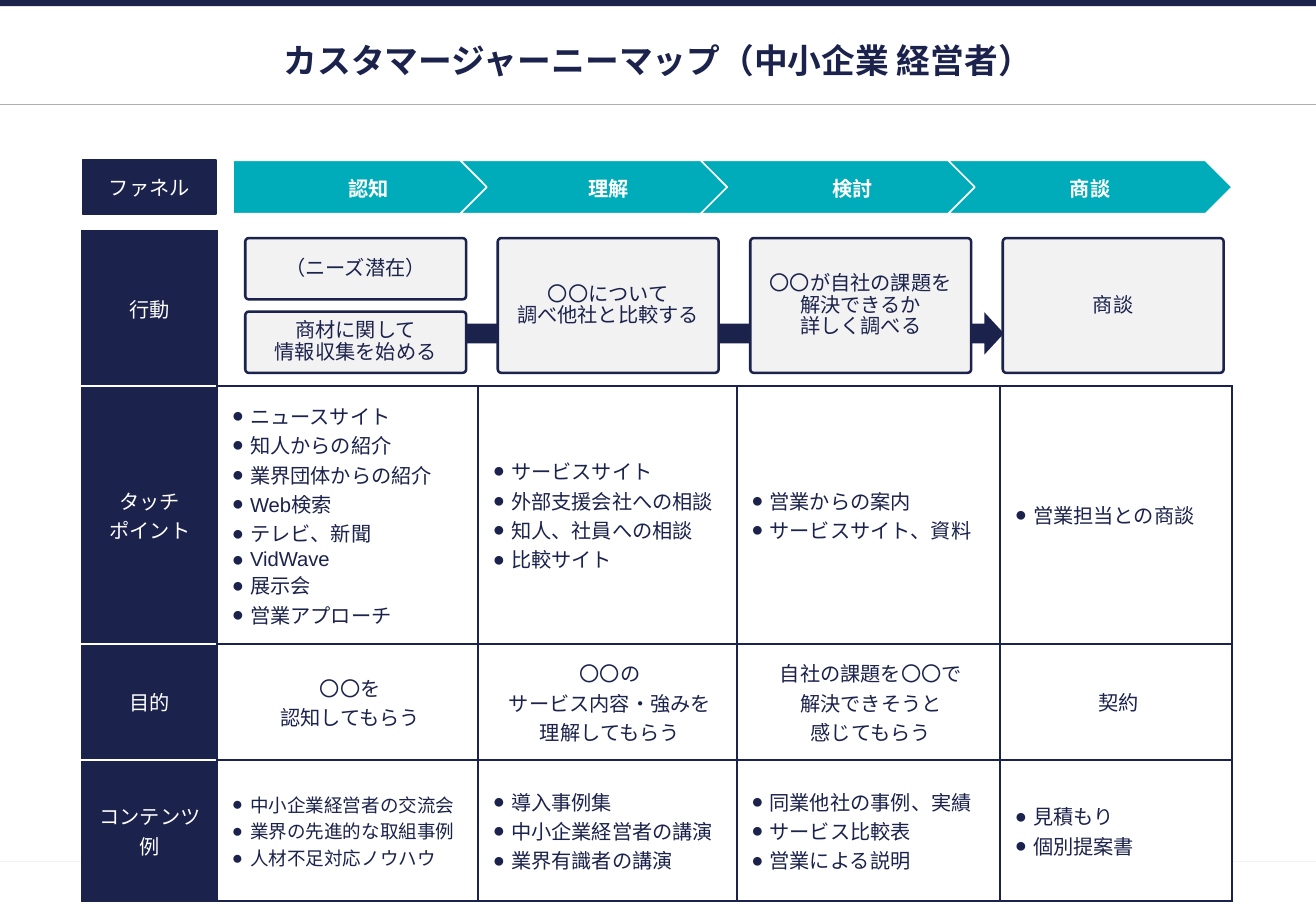
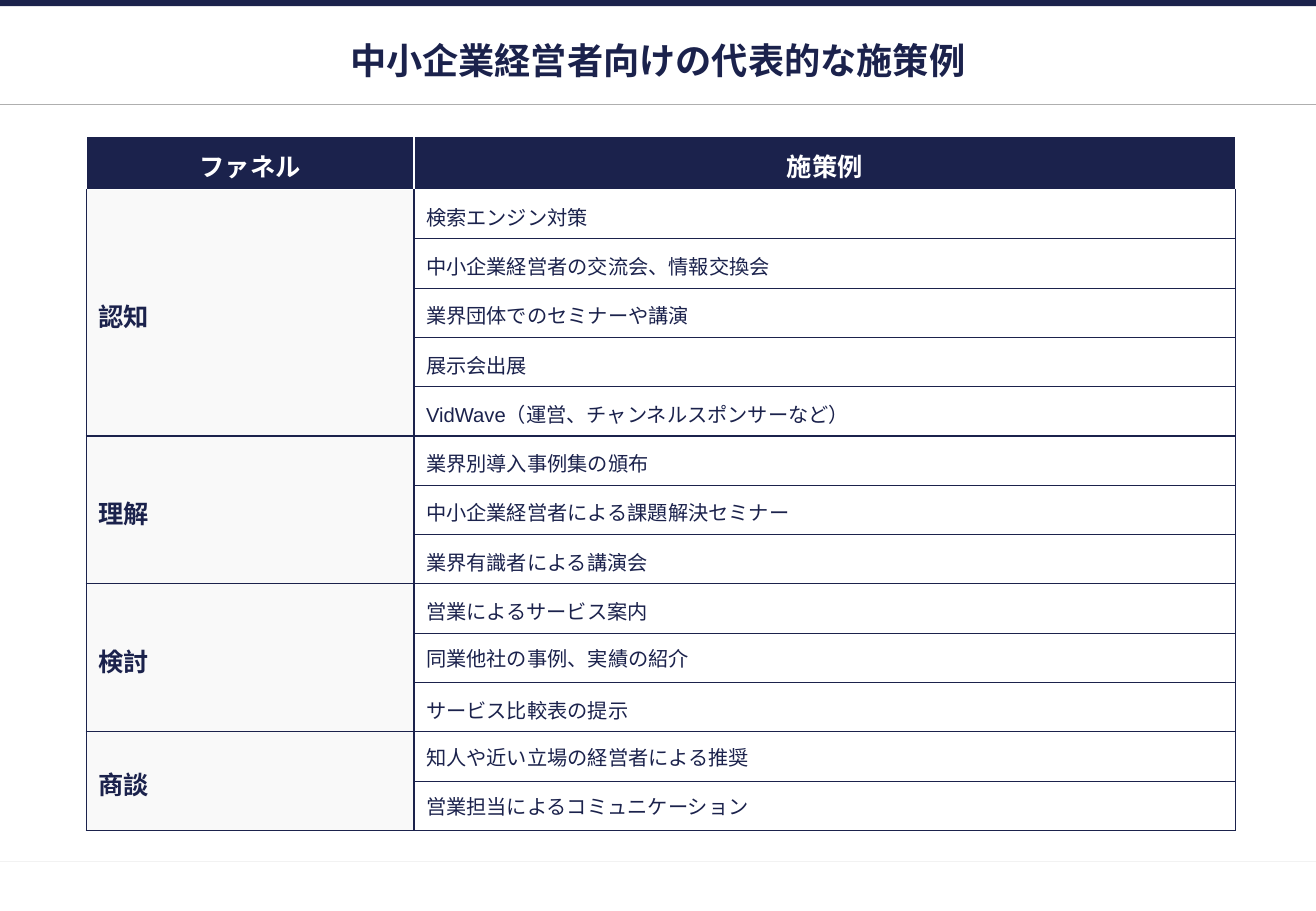
from dataclasses import dataclass
from itertools import accumulate

from lxml import etree
from pptx import Presentation
from pptx.dml.color import RGBColor
from pptx.enum.shapes import MSO_CONNECTOR, MSO_SHAPE
from pptx.enum.text import MSO_ANCHOR, PP_ALIGN
from pptx.oxml.ns import qn
from pptx.util import Inches, Pt

CENTER, LEFT = PP_ALIGN.CENTER, PP_ALIGN.LEFT
MIDDLE = MSO_ANCHOR.MIDDLE
STRAIGHT = MSO_CONNECTOR.STRAIGHT
RECT, ROUNDED = MSO_SHAPE.RECTANGLE, MSO_SHAPE.ROUNDED_RECTANGLE
PENTAGON, CHEVRON = MSO_SHAPE.PENTAGON, MSO_SHAPE.CHEVRON
ARROW = MSO_SHAPE.RIGHT_ARROW


@dataclass(frozen=True)
class Theme:
    """Colours, font and type sizes of the deck."""
    navy: str = "1B224C"
    teal: str = "00ACBA"
    white: str = "FFFFFF"
    panel: str = "F2F2F2"
    stage: str = "F9F9F9"
    rule: str = "AFAFAF"
    font: str = "Arial"
    title: float = 20
    title_large: float = 21.5
    heading: float = 15
    body: float = 12
    small: float = 11


THEME = Theme()
WIDTH, HEIGHT = 10.84, 7.5
SIDES = {"left": "a:lnL", "right": "a:lnR", "top": "a:lnT", "bottom": "a:lnB"}

JOURNEY_LEFT, JOURNEY_TOP = 0.68, 1.9
JOURNEY_COLUMNS = (1.11, 2.15, 2.13, 2.17, 1.91)
JOURNEY_ROWS = (1.28, 2.12, 0.96, 1.16)
FUNNEL_TOP, FUNNEL_HEIGHT = 1.32, 0.44
FUNNEL_EDGES = (1.92, 3.79, 5.77, 7.81, 9.68)
FUNNEL_OVERLAP = 0.47
ACTION_LEFT, ACTION_TOP = 2.02, 1.96
ACTION_WIDTH, ACTION_HEIGHT, ACTION_PITCH = 1.82, 1.11, 2.08
ACTION_GAP, ACTION_RADIUS = 0.1, 0.03

STAGES = ("認知", "理解", "検討", "商談")
ACTIONS = (
    (("（ニーズ潜在）",), ("商材に関して", "情報収集を始める")),
    (("〇〇について", "調べ他社と比較する"),),
    (("〇〇が自社の課題を解決できるか", "詳しく調べる"),),
    (("商談",),),
)
JOURNEY = (
    (("行動",), False, ((), (), (), ())),
    (("タッチ", "ポイント"), True, (
        ("ニュースサイト", "知人からの紹介", "業界団体からの紹介", "Web検索",
         "テレビ、新聞", "VidWave", "展示会", "営業アプローチ"),
        ("サービスサイト", "外部支援会社への相談", "知人、社員への相談", "比較サイト"),
        ("営業からの案内", "サービスサイト、資料"),
        ("営業担当との商談",))),
    (("目的",), False, (
        ("〇〇を", "認知してもらう"),
        ("〇〇の", "サービス内容・強みを", "理解してもらう"),
        ("自社の課題を〇〇で", "解決できそうと", "感じてもらう"),
        ("契約",))),
    (("コンテンツ例",), True, (
        ("中小企業経営者の交流会", "業界の先進的な取組事例", "人材不足対応ノウハウ"),
        ("導入事例集", "中小企業経営者の講演", "業界有識者の講演"),
        ("同業他社の事例、実績", "サービス比較表", "営業による説明"),
        ("見積もり", "個別提案書"))),
)
MEASURES = (
    ("検索エンジン対策", "中小企業経営者の交流会、情報交換会", "業界団体でのセミナーや講演",
     "展示会出展", "VidWave（運営、チャンネルスポンサーなど）"),
    ("業界別導入事例集の頒布", "中小企業経営者による課題解決セミナー", "業界有識者による講演会"),
    ("営業によるサービス案内", "同業他社の事例、実績の紹介", "サービス比較表の提示"),
    ("知人や近い立場の経営者による推奨", "営業担当によるコミュニケーション"),
)
SINGLE_SPACED = {"同業他社の事例、実績の紹介", *MEASURES[-1]}


def rgb(color):
    """Turn a hex string into a colour."""
    return RGBColor.from_string(color)


def add_bullet(paragraph):
    """Give a paragraph a hanging round bullet."""
    properties = paragraph._p.get_or_add_pPr()
    properties.set("marL", str(Inches(0.15)))
    properties.set("indent", str(Inches(-0.15)))
    tint = etree.SubElement(properties, qn("a:buClr"))
    etree.SubElement(tint, qn("a:srgbClr"), val=THEME.navy)
    etree.SubElement(properties, qn("a:buFont"), typeface=THEME.font)
    etree.SubElement(properties, qn("a:buChar"), char="●")


def write(frame, lines, size=THEME.body, color=THEME.navy, bold=False,
          align=CENTER, spacing=None, bulleted=False):
    """Write one paragraph per line into a text frame."""
    for index, line in enumerate(lines):
        paragraph = frame.add_paragraph() if index else frame.paragraphs[0]
        if bulleted:
            add_bullet(paragraph)
        paragraph.alignment = align
        if spacing:
            paragraph.line_spacing = spacing
        run = paragraph.add_run()
        run.text = line
        run.font.name = THEME.font
        run.font.size = Pt(size)
        run.font.bold = bold
        run.font.color.rgb = rgb(color)


def set_insets(holder, left, top, right, bottom):
    """Set the margins of a cell or text frame and centre it vertically."""
    holder.margin_left, holder.margin_top = Inches(left), Inches(top)
    holder.margin_right, holder.margin_bottom = Inches(right), Inches(bottom)
    holder.vertical_anchor = MIDDLE


def add_block(slide, kind, box, fill, line=None, weight=1, adjust=(),
              lines=(), insets=(0, 0, 0, 0), **style):
    """Add a flat preset shape with optional outline and text."""
    block = slide.shapes.add_shape(kind, *map(Inches, box))
    block.shadow.inherit = False
    block.fill.solid()
    block.fill.fore_color.rgb = rgb(fill)
    if line:
        block.line.color.rgb = rgb(line)
        block.line.width = Pt(weight)
    else:
        block.line.fill.background()
    for index, value in enumerate(adjust):
        block.adjustments[index] = value
    block.text_frame.word_wrap = True
    set_insets(block.text_frame, *insets)
    write(block.text_frame, lines, **style)


def add_rule(slide, top, color):
    """Draw a thin line across the slide."""
    rule = slide.shapes.add_connector(
        STRAIGHT, 0, Inches(top), Inches(WIDTH), Inches(top))
    rule.line.color.rgb = rgb(color)
    rule.line.width = Pt(0.75)
    etree.SubElement(rule._element.spPr, qn("a:effectLst"))


def add_page(deck, title, size):
    """Add a slide with the shared band, rules and title."""
    slide = deck.slides.add_slide(deck.slide_layouts[6])
    add_rule(slide, 7.09, THEME.panel)
    add_block(slide, RECT, (0, 0, WIDTH, 0.05), THEME.navy)
    add_rule(slide, 0.86, THEME.rule)
    heading = slide.shapes.add_textbox(*map(Inches, (0.5, 0.3, WIDTH - 1, 0.39)))
    heading.text_frame.word_wrap = True
    set_insets(heading.text_frame, 0.04, 0.04, 0.04, 0.05)
    write(heading.text_frame, [title], size, bold=True)
    return slide


def add_grid(slide, left, top, columns, rows):
    """Add a plain table with the given column widths and row heights."""
    grid = slide.shapes.add_table(
        len(rows), len(columns), Inches(left), Inches(top),
        Inches(sum(columns)), Inches(sum(rows))).table
    grid.first_row = grid.horz_banding = False
    for column, width in zip(grid.columns, columns):
        column.width = Inches(width)
    for row, height in zip(grid.rows, rows):
        row.height = Inches(height)
    return grid


def style_cell(cell, fill, weight, insets, border=THEME.navy, **sides):
    """Set a cell's borders, fill and margins."""
    properties = cell._tc.get_or_add_tcPr()
    for side, tag in SIDES.items():
        color = sides.get(side, border)
        edge = etree.SubElement(properties, qn(tag), w=str(Pt(weight)))
        if color:
            paint = etree.SubElement(edge, qn("a:solidFill"))
            etree.SubElement(paint, qn("a:srgbClr"), val=color)
        else:
            etree.SubElement(edge, qn("a:noFill"))
    if fill:
        cell.fill.solid()
        cell.fill.fore_color.rgb = rgb(fill)
    else:
        cell.fill.background()
    set_insets(cell, *insets)


def add_journey_table(slide):
    """Add the table of touchpoints, goals and contents by stage."""
    grid = add_grid(slide, JOURNEY_LEFT, JOURNEY_TOP, JOURNEY_COLUMNS, JOURNEY_ROWS)
    last = len(JOURNEY) - 1
    for row, (label, bulleted, entries) in enumerate(JOURNEY):
        head = grid.cell(row, 0)
        style_cell(head, THEME.navy, 1.5, (0.12,) * 4,
                   top=THEME.white if row else THEME.navy,
                   bottom=THEME.white if row < last else THEME.navy)
        write(head.text_frame, label, color=THEME.white)
        for column, lines in enumerate(entries, 1):
            cell = grid.cell(row, column)
            open_sides = {} if row else {
                "top": None, "right": None,
                "left": THEME.navy if column == 1 else None}
            style_cell(cell, THEME.white if row else None, 1.5,
                       (0.12, 0.12, 0.08, 0.12), **open_sides)
            size = THEME.small if (row, column) == (last, 1) else THEME.body
            write(cell.text_frame, lines, size, bulleted=bulleted,
                  align=LEFT if bulleted else CENTER)


def add_funnel(slide):
    """Add the funnel label and its chain of stages."""
    add_block(slide, RECT, (JOURNEY_LEFT, FUNNEL_TOP, 1.1, FUNNEL_HEIGHT),
              THEME.navy, THEME.navy, lines=["ファネル"], color=THEME.white)
    for index, stage in enumerate(STAGES):
        start, end = FUNNEL_EDGES[index:index + 2]
        add_block(slide, CHEVRON if index else PENTAGON,
                  (start, FUNNEL_TOP, end - start + FUNNEL_OVERLAP, FUNNEL_HEIGHT),
                  THEME.teal, THEME.white, adjust=[0.5], lines=[stage],
                  insets=(0.04, 0.04, 0.04, 0), color=THEME.white, bold=True,
                  spacing=0.9)


def add_actions(slide):
    """Add the customer's actions on top of the arrow that links them."""
    add_block(slide, ARROW, (3.61, 2.57, 4.66, 0.35), THEME.navy,
              adjust=(0.465, 0.461))
    for column, stack in enumerate(ACTIONS):
        height = (ACTION_HEIGHT - ACTION_GAP * (len(stack) - 1)) / len(stack)
        for row, lines in enumerate(stack):
            box = (ACTION_LEFT + column * ACTION_PITCH,
                   ACTION_TOP + row * (height + ACTION_GAP), ACTION_WIDTH, height)
            add_block(slide, ROUNDED, box, THEME.panel, THEME.navy, 1.5,
                      [ACTION_RADIUS / height], lines,
                      (0.08, 0.04, 0.08, 0.04), spacing=0.9)


def add_measures_table(slide):
    """Add the table of measures grouped by stage."""
    count = sum(map(len, MEASURES))
    header, total = 0.44, 5.72
    rows = [header] + [(total - header) / count] * count
    grid = add_grid(slide, 0.71, 1.12, (2.7, 6.77), rows)
    insets = (0.1, 0.05, 0.1, 0.05)
    for column, name in enumerate(("ファネル", "施策例")):
        cell = grid.cell(0, column)
        style_cell(cell, THEME.navy, 0.75, insets, THEME.white)
        write(cell.text_frame, [name], THEME.heading, THEME.white, True, spacing=1.15)
    starts = accumulate(map(len, MEASURES), initial=1)
    for first, stage, measures in zip(starts, STAGES, MEASURES):
        for row, measure in enumerate(measures, first):
            top = THEME.white if row == 1 else THEME.navy
            style_cell(grid.cell(row, 0), THEME.stage, 0.75, insets, top=top)
            style_cell(grid.cell(row, 1), None, 0.75, insets, top=top)
            write(grid.cell(row, 1).text_frame, [measure], align=LEFT,
                  spacing=None if measure in SINGLE_SPACED else 1.15)
        group = grid.cell(first, 0)
        group.merge(grid.cell(first + len(measures) - 1, 0))
        write(group.text_frame, [stage], THEME.heading, bold=True,
              align=LEFT, spacing=1.15)


def main():
    """Build both slides and save the deck."""
    deck = Presentation()
    deck.slide_width, deck.slide_height = Inches(WIDTH), Inches(HEIGHT)
    journey = add_page(deck, "カスタマージャーニーマップ（中小企業 経営者）", THEME.title)
    add_journey_table(journey)
    add_funnel(journey)
    add_actions(journey)
    measures = add_page(deck, "中小企業経営者向けの代表的な施策例", THEME.title_large)
    add_measures_table(measures)
    deck.save("out.pptx")


if __name__ == "__main__":
    main()
